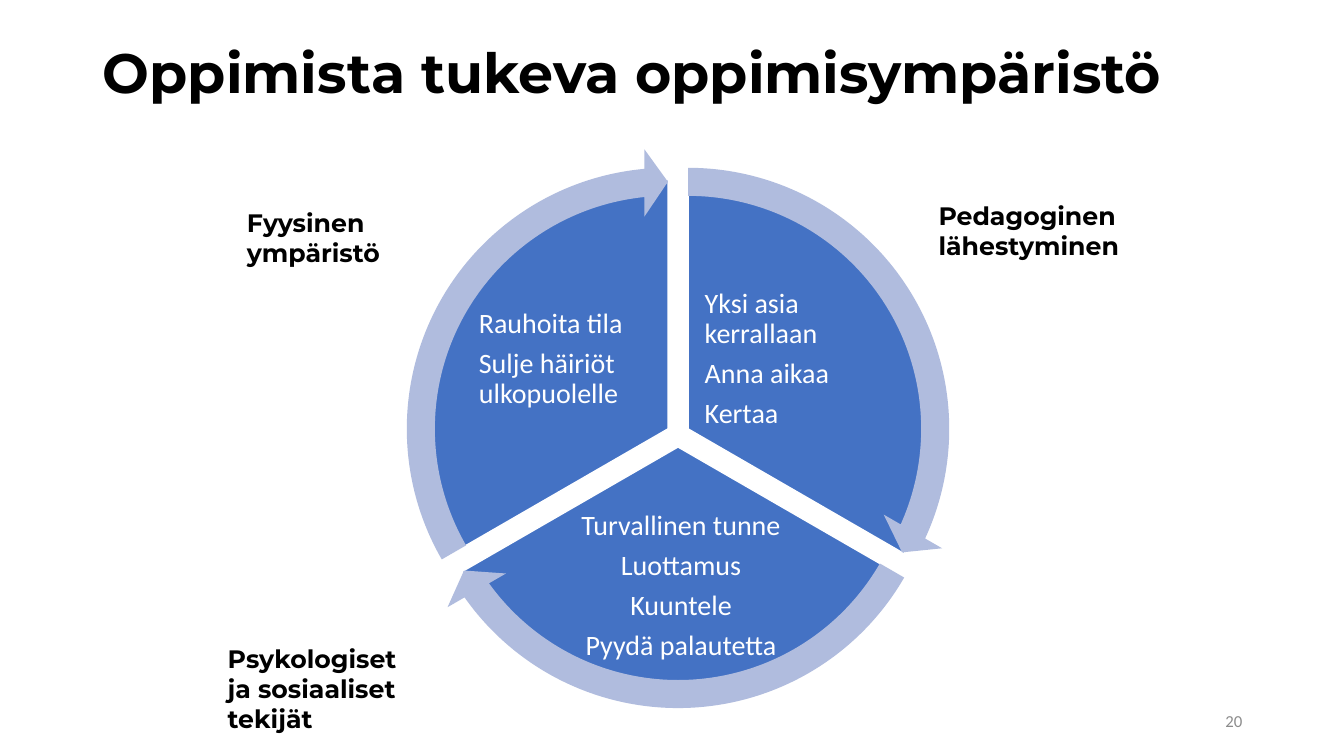
from dataclasses import dataclass

from pptx import Presentation
from pptx.dml.color import RGBColor
from pptx.enum.shapes import MSO_SHAPE
from pptx.enum.text import MSO_ANCHOR, PP_ALIGN
from pptx.util import Inches, Pt

PIE, CIRCULAR_ARROW = MSO_SHAPE.PIE, MSO_SHAPE.CIRCULAR_ARROW
TOP, MIDDLE = MSO_ANCHOR.TOP, MSO_ANCHOR.MIDDLE
LEFT, CENTER, RIGHT = PP_ALIGN.LEFT, PP_ALIGN.CENTER, PP_ALIGN.RIGHT

COLORS = {
    "text": "000000",
    "white": "FFFFFF",
    "wedge": "4472C4",
    "arrow": "B0BCDE",
    "number": "8C8C8C",
}
HEADING_FONT, BODY_FONT = "Montserrat", "Calibri"
TITLE_ONLY_LAYOUT = 5

WEDGE_SIZE, ARROW_SIZE = 4.95, 5.57
ARROW_OFFSET = (ARROW_SIZE - WEDGE_SIZE) / 2
# Angles as adjustment values: 0.6 is one degree
ARROW_WIDTH, HEAD_ANGLE, HEAD_WIDTH = 0.05, 3.28, 0.06


@dataclass
class TextStyle:
    font: str
    size: float
    color: str
    bold: bool = False
    align: PP_ALIGN = LEFT
    line_spacing: float = 1.0
    space_after: float = 0


@dataclass
class Wedge:
    left: float
    top: float
    start: float
    end: float
    text_area: tuple[float, float, float, float]
    align: PP_ALIGN
    lines: list[str]


@dataclass
class Label:
    text: str
    left: float
    top: float
    height: float


WEDGES = [
    Wedge(4.35, 1.78, 162, 18, (6.96, 2.83, 1.77, 1.47), LEFT,
          ["Yksi asia kerrallaan", "Anna aikaa", "Kertaa"]),
    Wedge(4.25, 1.96, 18, 90, (5.43, 5.17, 2.65, 1.3), CENTER,
          ["Turvallinen tunne", "Luottamus", "Kuuntele", "Pyydä palautetta"]),
    Wedge(4.15, 1.78, 90, 162, (4.72, 2.83, 1.77, 1.47), LEFT,
          ["Rauhoita tila", "Sulje häiriöt ulkopuolelle"]),
]
LABELS = [
    Label("Fyysinen ympäristö", 2.35, 2.01, 0.71),
    Label("Psykologiset ja sosiaaliset tekijät", 2.16, 6.33, 1.01),
    Label("Pedagoginen lähestyminen", 9.21, 1.94, 0.71),
]


def color(name: str) -> RGBColor:
    return RGBColor.from_string(COLORS[name])


def write_text(frame, lines: list[str], style: TextStyle, anchor=TOP) -> None:
    frame.word_wrap = True
    frame.vertical_anchor = anchor
    for index, line in enumerate(lines):
        para = frame.add_paragraph() if index else frame.paragraphs[0]
        para.alignment = style.align
        para.line_spacing = style.line_spacing
        para.space_after = Pt(style.space_after)
        span = para.add_run()
        span.text = line
        span.font.name = style.font
        span.font.size = Pt(style.size)
        span.font.bold = style.bold
        span.font.color.rgb = color(style.color)


def add_text(page, area: tuple[float, float, float, float], lines: list[str],
             style: TextStyle, anchor=TOP, inset: float | None = None) -> None:
    frame = page.shapes.add_textbox(*map(Inches, area)).text_frame
    if inset is not None:
        frame.margin_left = frame.margin_right = Inches(inset)
        frame.margin_top = frame.margin_bottom = Inches(inset)
    write_text(frame, lines, style, anchor)


def add_round_shape(page, kind: MSO_SHAPE, left: float, top: float, size: float,
                    adjustments: list[float], fill: str):
    shape = page.shapes.add_shape(
        kind, Inches(left), Inches(top), Inches(size), Inches(size))
    for index, value in enumerate(adjustments):
        shape.adjustments[index] = value
    shape.shadow.inherit = False
    shape.fill.solid()
    shape.fill.fore_color.rgb = color(fill)
    return shape


def add_wedge(page, wedge: Wedge) -> None:
    pie = add_round_shape(page, PIE, wedge.left, wedge.top, WEDGE_SIZE,
                          [wedge.start, wedge.end], "wedge")
    pie.line.color.rgb = color("white")
    pie.line.width = Pt(1)
    style = TextStyle(BODY_FONT, 20, "white", align=wedge.align,
                      line_spacing=0.9, space_after=7)
    add_text(page, wedge.text_area, wedge.lines, style, MIDDLE, inset=0.03)


def add_arrow(page, wedge: Wedge) -> None:
    adjustments = [ARROW_WIDTH, HEAD_ANGLE, wedge.end - HEAD_ANGLE,
                   wedge.start, HEAD_WIDTH]
    arrow = add_round_shape(page, CIRCULAR_ARROW, wedge.left - ARROW_OFFSET,
                            wedge.top - ARROW_OFFSET, ARROW_SIZE,
                            adjustments, "arrow")
    arrow.line.fill.background()


def main() -> None:
    deck = Presentation()
    deck.slide_width, deck.slide_height = Inches(13.33), Inches(7.5)
    page = deck.slides.add_slide(deck.slide_layouts[TITLE_ONLY_LAYOUT])

    # Title
    title = page.shapes.title
    title.left, title.top = Inches(0.92), Inches(0.4)
    title.width, title.height = Inches(11.5), Inches(1.45)
    write_text(title.text_frame, ["Oppimista tukeva oppimisympäristö"],
               TextStyle(HEADING_FONT, 39.6, "text", bold=True, line_spacing=0.9))

    # Page number
    add_text(page, (9.42, 6.95, 3, 0.4), ["20"],
             TextStyle(BODY_FONT, 12, "number", align=RIGHT), MIDDLE)

    # Cycle: wedges below, arrows on top
    for wedge in WEDGES:
        add_wedge(page, wedge)
    for wedge in WEDGES:
        add_arrow(page, wedge)

    # Labels around the cycle
    label_style = TextStyle(HEADING_FONT, 18, "text", bold=True)
    for label in LABELS:
        add_text(page, (label.left, label.top, 2.05, label.height),
                 [label.text], label_style)

    deck.save("out.pptx")


if __name__ == "__main__":
    main()
